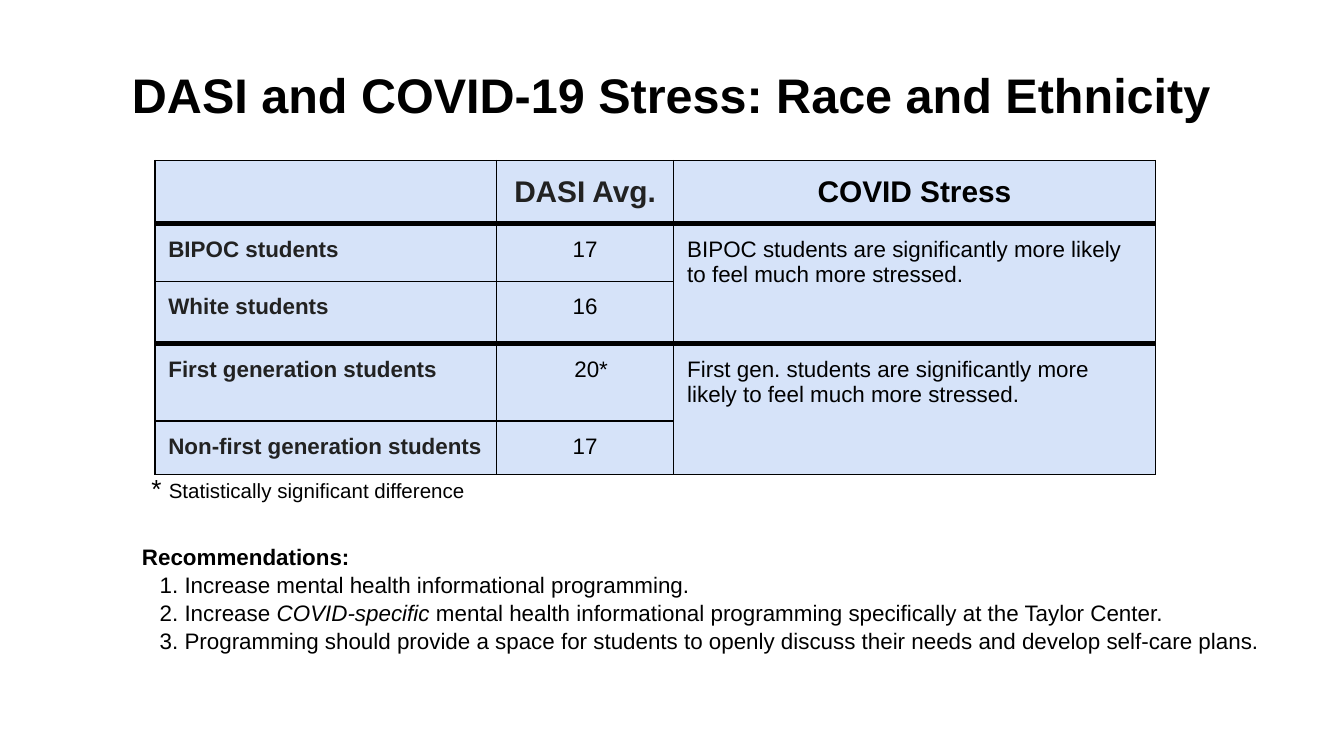
from lxml import etree
from pptx import Presentation
from pptx.dml.color import RGBColor
from pptx.enum import text
from pptx.oxml import ns
from pptx.util import Pt

BLACK = RGBColor(0x00, 0x00, 0x00)
CHARCOAL = RGBColor(0x22, 0x22, 0x22)
PALE_BLUE = RGBColor(0xC9, 0xDA, 0xF8)
FONT = "Arial"
INSET = Pt(7.2)
THIN, HEAVY = Pt(0.75), Pt(3)

COLUMN_WIDTHS = (183, 95, 258)
ROW_HEIGHTS = (32, 31, 33.5, 41.5, 28)
ROWS = (
    ("", "DASI Avg.", "COVID Stress"),
    ("BIPOC students", "17",
     "BIPOC students are significantly more likely to feel much more stressed."),
    ("White students", "16", ""),
    ("First generation students", "20*",
     "First gen. students are significantly more likely to feel much more stressed."),
    ("Non-first generation students", "17", ""),
)
# Each recommendation is a list of (words, italic) spans
RECOMMENDATIONS = (
    [("1. Increase mental health informational programming.", False)],
    [("2. Increase ", False), ("COVID-specific", True),
     (" mental health informational programming specifically at the Taylor Center.", False)],
    [("3. Programming should provide a space for students to openly discuss "
      "their needs and develop self-care plans.", False)],
)


def style(span, size, color=BLACK, bold=False, italic=False):
    font = span.font
    font.name, font.size = FONT, Pt(size)
    font.bold, font.italic = bold, italic
    font.color.rgb = color


def add_span(para, words, size, **look):
    span = para.add_run()
    span.text = words
    style(span, size, **look)


def set_insets(target):
    target.margin_left = target.margin_right = INSET
    target.margin_top = target.margin_bottom = INSET


def indent(para, points):
    para._p.get_or_add_pPr().set("marL", str(Pt(points)))


def add_text_box(page, left, top, width, height):
    box = page.shapes.add_textbox(Pt(left), Pt(top), Pt(width), Pt(height))
    frame = box.text_frame
    frame.word_wrap = True
    set_insets(frame)
    return frame


def add_title(page, left, top, width, height):
    title = page.shapes.title
    title.left, title.top = Pt(left), Pt(top)
    title.width, title.height = Pt(width), Pt(height)
    frame = title.text_frame
    frame.text = "DASI and COVID-19 Stress: Race and Ethnicity"
    frame.vertical_anchor = text.MSO_ANCHOR.MIDDLE
    set_insets(frame)
    para = frame.paragraphs[0]
    para.alignment = text.PP_ALIGN.LEFT
    style(para.runs[0], 26, bold=True)


def paint_cell(cell, top_line, bottom_line):
    cell.fill.solid()
    cell.fill.fore_color.rgb = PALE_BLUE
    properties = cell._tc.get_or_add_tcPr()
    color = properties.find(".//" + ns.qn("a:srgbClr"))
    etree.SubElement(color, ns.qn("a:alpha"), val="75000")
    # Borders come before the fill in a cell's properties
    edges = (("L", THIN), ("R", THIN), ("T", top_line), ("B", bottom_line))
    for position, (side, width) in enumerate(edges):
        line = etree.Element(ns.qn(f"a:ln{side}"), w=str(width))
        fill = etree.SubElement(line, ns.qn("a:solidFill"))
        etree.SubElement(fill, ns.qn("a:srgbClr"), val=str(BLACK))
        properties.insert(position, line)


def write_cell(cell, words, row, column):
    set_insets(cell)
    header = row == 0
    para = cell.text_frame.paragraphs[0]
    if header:
        cell.vertical_anchor = text.MSO_ANCHOR.MIDDLE
    if header or column == 1:
        para.alignment = text.PP_ALIGN.CENTER
    if words.endswith("*"):
        indent(para, 6.5)
    if words:
        dark = column == 0 or (header and column == 1)
        add_span(para, words, 16 if header else 12, bold=header or column == 0,
                 color=CHARCOAL if dark else BLACK)
    else:
        para._p.get_or_add_endParaRPr().set("sz", "1200")


def add_stress_table(page, left, top):
    frame = page.shapes.add_table(
        len(ROWS), len(COLUMN_WIDTHS), Pt(left), Pt(top),
        Pt(sum(COLUMN_WIDTHS)), Pt(sum(ROW_HEIGHTS)))
    table = frame.table
    for column, width in zip(table.columns, COLUMN_WIDTHS):
        column.width = Pt(width)
    for row, height in zip(table.rows, ROW_HEIGHTS):
        row.height = Pt(height)
    for row, entries in enumerate(ROWS):
        for column, words in enumerate(entries):
            cell = table.cell(row, column)
            write_cell(cell, words, row, column)
            # Heavy rules set off the header and the two pairs of groups
            heavy_below = row in (0, 2) or (row, column) == (1, 2)
            paint_cell(cell, HEAVY if row in (1, 3) else THIN,
                       HEAVY if heavy_below else THIN)
    # One finding spans each pair of groups
    for row in (1, 3):
        table.cell(row, 2).merge(table.cell(row + 1, 2))


def add_footnote(page, left, top, width, height):
    para = add_text_box(page, left, top, width, height).paragraphs[0]
    add_span(para, "* ", 14)
    add_span(para, "Statistically significant difference", 11)


def add_recommendations(page, left, top, width, height):
    frame = add_text_box(page, left, top, width, height)
    heading = frame.paragraphs[0]
    heading.line_spacing = 1.04
    add_span(heading, "Recommendations:", 12, bold=True)
    for spans in RECOMMENDATIONS:
        para = frame.add_paragraph()
        indent(para, 9.5)
        para.line_spacing = 1.04
        for words, italic in spans:
            add_span(para, words, 12, italic=italic)


def main():
    deck = Presentation()
    deck.slide_width, deck.slide_height = Pt(720), Pt(405)
    page = deck.slides.add_slide(deck.slide_layouts.get_by_name("Title Only"))
    add_title(page, 63.5, 27.5, 671, 45.5)
    add_recommendations(page, 69, 283.5, 659, 94.5)
    add_stress_table(page, 83, 86)
    add_footnote(page, 74, 246, 271.5, 38)
    deck.save("out.pptx")


if __name__ == "__main__":
    main()
